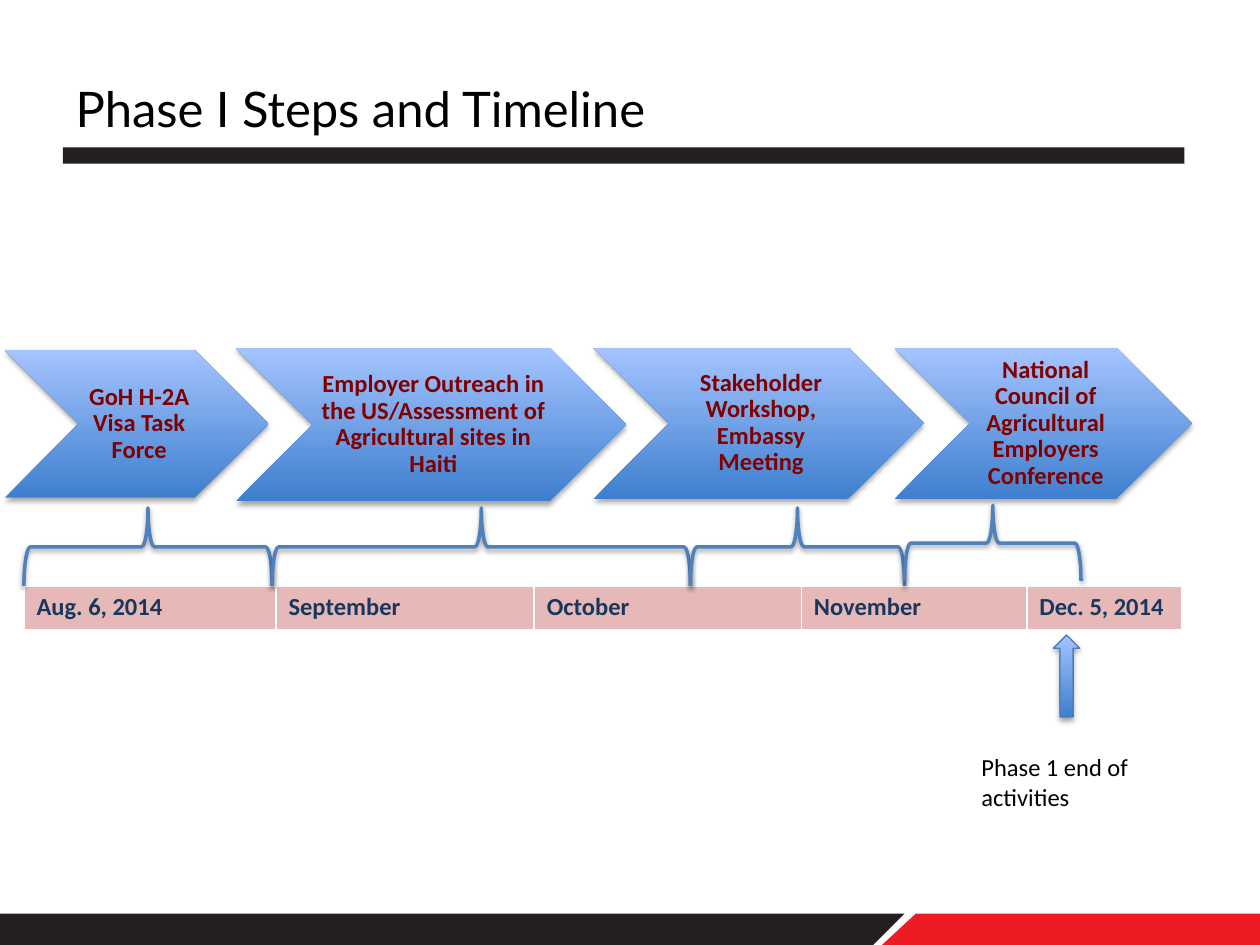
from itertools import pairwise

from lxml import etree
from pptx import Presentation
from pptx.dml.color import RGBColor
from pptx.enum.shapes import MSO_SHAPE
from pptx.enum.text import MSO_ANCHOR, MSO_AUTO_SIZE, PP_ALIGN
from pptx.oxml.ns import qn
from pptx.util import Inches, Pt

RECT, CHEVRON = MSO_SHAPE.RECTANGLE, MSO_SHAPE.CHEVRON
BRACE, UP_ARROW = MSO_SHAPE.RIGHT_BRACE, MSO_SHAPE.UP_ARROW
TOP, MIDDLE = MSO_ANCHOR.TOP, MSO_ANCHOR.MIDDLE
LEFT, CENTER = PP_ALIGN.LEFT, PP_ALIGN.CENTER
NO_FIT = MSO_AUTO_SIZE.NONE

COLS, ROWS = 100, 75  # grid of 0.1 inch squares
BLACK, RED, WHITE = "231F20", "ED1C24", "FFFFFF"
BLUE_GRADIENT = ("3F7FCE", "A4C4FF")

# Left, top, width, height and wording of each step
STEPS = [
    (0.4, 27.8, 20.9, 11.7, "GoH H-2A Visa Task Force"),
    (18.7, 27.6, 31, 12.2,
     "Employer Outreach in the US/Assessment of Agricultural sites in Haiti"),
    (47.1, 27.6, 26.2, 12, "Stakeholder Workshop, Embassy Meeting"),
    (71, 27.6, 23.6, 12, "National Council of Agricultural Employers Conference"),
]
BRACE_EDGES = [1.9, 21.6, 54.8, 71.8, 85.8]
MONTHS = {"Aug. 6, 2014": 20, "September": 20.5, "October": 21.2,
          "November": 17.9, "Dec. 5, 2014": 12.3}


def rgb(value):
    return RGBColor.from_string(value)


def u(units):
    return Inches(units / 10)


def apply(target, values):
    for name, value in values.items():
        setattr(target, name, value)


class Deck:
    font = {"name": "Calibri", "size": Pt(14), "bold": False}

    def __init__(self):
        self.prs = Presentation()
        self.prs.slide_width, self.prs.slide_height = u(COLS), u(ROWS)
        self.s = self.prs.slides.add_slide(self.prs.slide_layouts[5])

    def put_text(self, tf, text, color, font=None, frame=None, para=None):
        apply(tf, {"word_wrap": True, **(frame or {})})
        p = tf.paragraphs[0]
        apply(p, {"alignment": LEFT, **(para or {})})
        r = p.add_run()
        r.text = text
        apply(r.font, {**self.font, **(font or {})})
        r.font.color.rgb = rgb(color)

    def title(self, box, text):
        sp = self.s.shapes.title
        apply(sp, dict(zip(("left", "top", "width", "height"), map(u, box))))
        self.put_text(sp.text_frame, text, "000000",
                      {"name": "Lato", "size": Pt(28)},
                      {"vertical_anchor": TOP, "auto_size": NO_FIT})

    def text(self, box, text):
        sp = self.s.shapes.add_textbox(*map(u, box))
        self.put_text(sp.text_frame, text, "000000")

    def paint(self, sp, fill=None, line=None, weight=1):
        if isinstance(fill, tuple):
            sp.fill.gradient()
            sp.fill.gradient_angle = 90
            for stop, color in zip(sp.fill.gradient_stops, fill):
                stop.color.rgb = rgb(color)
        elif fill:
            sp.fill.solid()
            sp.fill.fore_color.rgb = rgb(fill)
        else:
            sp.fill.background()
        if line:
            sp.line.color.rgb = rgb(line)
            sp.line.width = Pt(weight)
        else:
            sp.line.fill.background()
        sp.shadow.inherit = False

    def shape(self, kind, box, **look):
        sp = self.s.shapes.add_shape(kind, *map(u, box))
        self.paint(sp, **look)
        return sp

    def shadow(self, sp, distance=1.8, opacity=35):
        effects = sp._element.spPr.find(qn("a:effectLst"))
        outer = etree.SubElement(
            effects, qn("a:outerShdw"), blurRad=str(Pt(3.1)),
            dist=str(Pt(distance)), dir="5400000", rotWithShape="0")
        color = etree.SubElement(outer, qn("a:srgbClr"), val="000000")
        etree.SubElement(color, qn("a:alpha"), val=str(opacity * 1000))

    def step(self, box, text):
        sp = self.shape(CHEVRON, box, fill=BLUE_GRADIENT)
        self.shadow(sp)
        self.put_text(sp.text_frame, text, "800000", {"bold": True},
                      {"vertical_anchor": MIDDLE, "margin_left": Inches(0.06),
                       "margin_right": Inches(0.02), "margin_top": Inches(0.02),
                       "margin_bottom": Inches(0.02)},
                      {"alignment": CENTER, "line_spacing": 0.9})

    def brace(self, start, end, top, height):
        # The box is upright before the turn, so its sides are swapped
        span = end - start
        left, upper = (start + end - height) / 2, top + (height - span) / 2
        sp = self.shape(BRACE, (left, upper, height, span),
                        line="4F81BD", weight=2)
        sp.rotation = 270
        self.shadow(sp, 1.6, 38)

    def table(self, left, top, height, columns):
        box = left, top, sum(columns.values()), height
        table = self.s.shapes.add_table(1, len(columns), *map(u, box)).table
        for i, (text, width) in enumerate(columns.items()):
            table.columns[i].width = u(width)
            cell = table.cell(0, i)
            tc_pr = cell._tc.get_or_add_tcPr()
            for side, weight in zip("LRTB", (1, 1, 1, 3)):
                ln = etree.SubElement(tc_pr, qn("a:ln" + side), w=str(Pt(weight)))
                fill = etree.SubElement(ln, qn("a:solidFill"))
                etree.SubElement(fill, qn("a:srgbClr"), val=WHITE)
            cell.fill.solid()
            cell.fill.fore_color.rgb = rgb("E6B9B8")
            self.put_text(cell.text_frame, text, "17375E", {"bold": True})

    def outline(self, points, fill):
        start, *rest = [(u(x), u(y)) for x, y in points]
        builder = self.s.shapes.build_freeform(*start)
        builder.add_line_segments(rest, close=True)
        self.paint(builder.convert_to_shape(), fill=fill)


def main():
    deck = Deck()

    # Heading and rule
    deck.shape(RECT, (5, 11.7, 89, 1.3), fill=BLACK)
    deck.title((5, 5.7, 92.9, 5.7), "Phase I Steps and Timeline")

    # Steps
    for *box, text in STEPS:
        deck.step(box, text)

    # Months, with braces joining them to the steps
    deck.table(1.9, 46.5, 3.6, MONTHS)
    for start, end in pairwise(BRACE_EDGES):
        last = end == BRACE_EDGES[-1]
        deck.brace(start, end, *((40.1, 6) if last else (40.3, 6.2)))

    # End marker
    arrow = deck.shape(UP_ARROW, (83.6, 50.4, 2.1, 6.5), fill=BLUE_GRADIENT,
                       line="4B7EBC", weight=0.75)
    deck.shadow(arrow)
    deck.text((76.9, 59.2, 16.2, 5.7), "Phase 1 end of activities")

    # Footer bands
    deck.outline([(0, 72.5), (71.8, 72.5), (69.3, ROWS), (0, ROWS)], BLACK)
    deck.outline([(COLS, ROWS), (70, ROWS), (72.7, 72.5), (COLS, 72.5)], RED)

    deck.prs.save("out.pptx")


if __name__ == "__main__":
    main()
